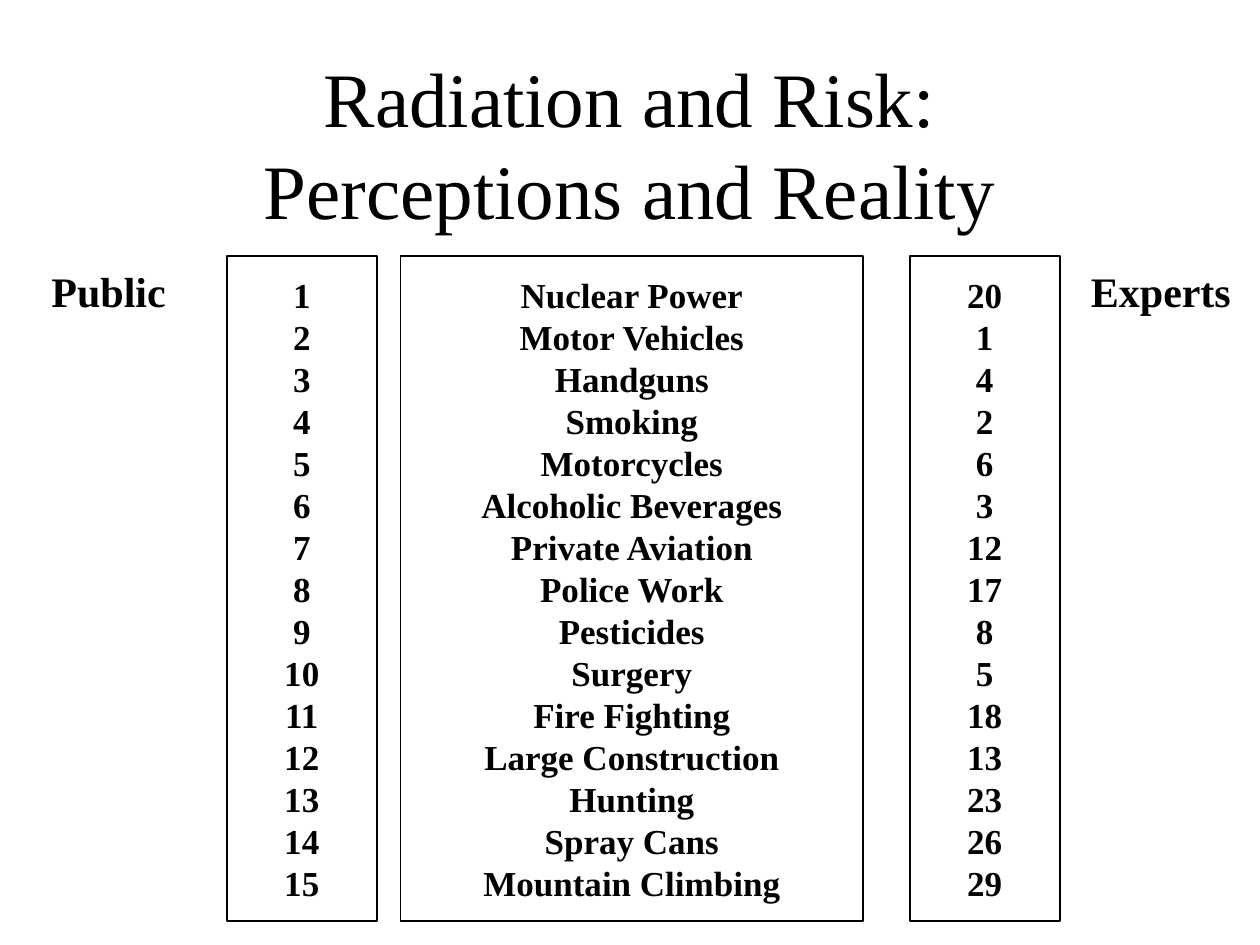
from pptx import Presentation
from pptx.dml.color import RGBColor
from pptx.enum.shapes import MSO_SHAPE
from pptx.enum.text import MSO_ANCHOR, MSO_AUTO_SIZE, PP_ALIGN
from pptx.util import Pt

RECT = MSO_SHAPE.RECTANGLE
TOP, MIDDLE, BOTTOM = MSO_ANCHOR.TOP, MSO_ANCHOR.MIDDLE, MSO_ANCHOR.BOTTOM
LEFT, CENTER = PP_ALIGN.LEFT, PP_ALIGN.CENTER
FIT_SHAPE = MSO_AUTO_SIZE.SHAPE_TO_FIT_TEXT

COLORS = {"ink": "000000"}
FONT = "Times New Roman"

# Activity, rank by experts; the rows stand in the order of the public's ranks.
RISKS = [
    ("Nuclear Power", 20),
    ("Motor Vehicles", 1),
    ("Handguns", 4),
    ("Smoking", 2),
    ("Motorcycles", 6),
    ("Alcoholic Beverages", 3),
    ("Private Aviation", 12),
    ("Police Work", 17),
    ("Pesticides", 8),
    ("Surgery", 5),
    ("Fire Fighting", 18),
    ("Large Construction", 13),
    ("Hunting", 23),
    ("Spray Cans", 26),
    ("Mountain Climbing", 29),
]


def write(tf, text, size, bold, align, anchor, wrap=False):
    tf.word_wrap = wrap
    tf.vertical_anchor = anchor
    tf.text = text
    for p in tf.paragraphs:
        p.alignment = align
        p.font.name = FONT
        p.font.size = Pt(size)
        p.font.bold = bold
        p.font.color.rgb = RGBColor.from_string(COLORS["ink"])


def add_title(s, x, y, w, h, text):
    sp = s.shapes.add_textbox(Pt(x), Pt(y), Pt(w), Pt(h))
    write(sp.text_frame, text, 44, False, CENTER, BOTTOM, wrap=True)


def add_heading(s, x, y, w, h, text):
    sp = s.shapes.add_textbox(Pt(x), Pt(y), Pt(w), Pt(h))
    write(sp.text_frame, text, 24, True, LEFT, TOP)
    sp.text_frame.auto_size = FIT_SHAPE


def add_column(s, x, y, w, h, entries):
    """Outlined box with one centred line for each entry."""
    sp = s.shapes.add_shape(RECT, Pt(x), Pt(y), Pt(w), Pt(h))
    sp.shadow.inherit = False
    sp.fill.background()
    sp.line.color.rgb = RGBColor.from_string(COLORS["ink"])
    sp.line.width = Pt(1)
    write(sp.text_frame, "\n".join(map(str, entries)), 20, True, CENTER, MIDDLE)


def add_ranking(s, x, y, w, h):
    """Activities between the two rank columns, each headed on its outer side."""
    rank_w = 85.68
    activities, expert_ranks = zip(*RISKS)
    public_ranks = range(1, len(RISKS) + 1)
    add_column(s, x + 206.64, y, 264.24, h, activities)
    add_column(s, x + 107.28, y, rank_w, h, public_ranks)
    add_heading(s, x, y + 2, 80.64, 36.72, "Public")
    add_column(s, x + 497.52, y, rank_w, h, expert_ranks)
    add_heading(s, x + w - 95.04, y + 2, 95.04, 36.72, "Experts")


def main():
    prs = Presentation()
    prs.slide_width, prs.slide_height = Pt(720), Pt(540)
    s = prs.slides.add_slide(prs.slide_layouts[6])
    add_title(s, 54, 48, 612, 90, "Radiation and Risk:\vPerceptions and Reality")
    add_ranking(s, 22.32, 146.16, 689.04, 380.16)
    prs.save("out.pptx")


if __name__ == "__main__":
    main()
